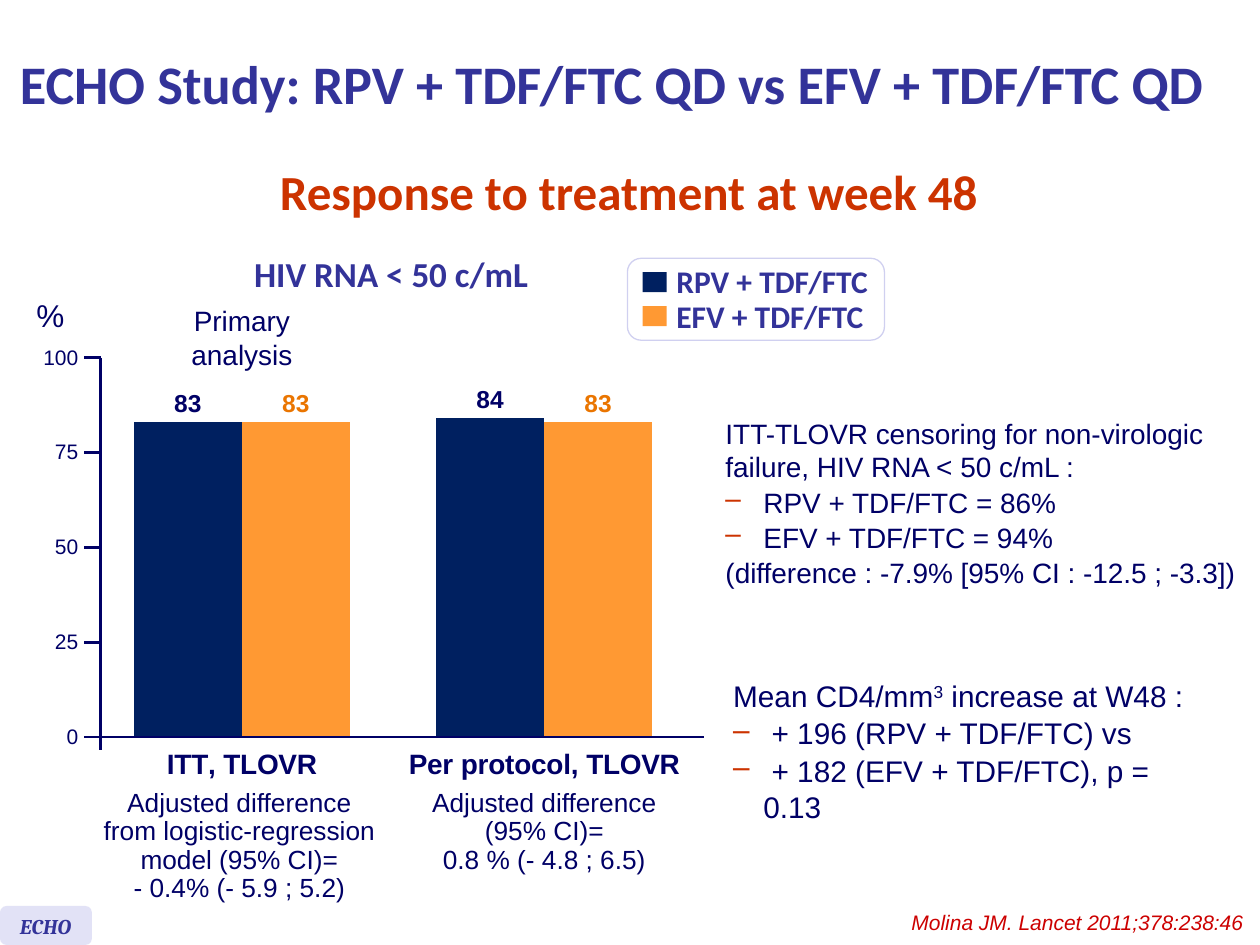
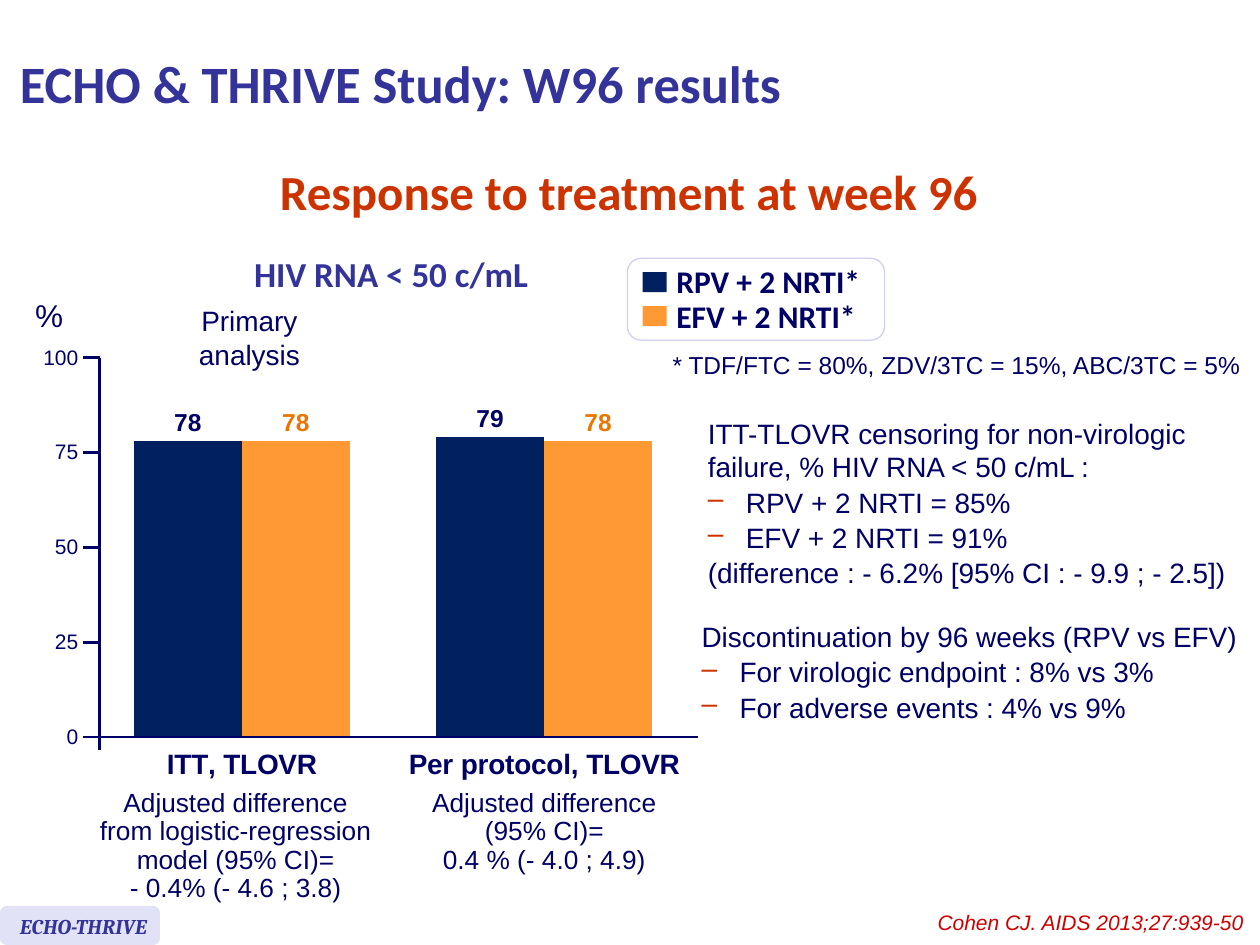
from dataclasses import dataclass

import lxml.etree
import pptx
import pptx.chart.data
import pptx.dml.color
import pptx.enum.chart
import pptx.enum.shapes
import pptx.enum.text
import pptx.oxml.ns
import pptx.util

Inches = pptx.util.Inches
Pt = pptx.util.Pt
qn = pptx.oxml.ns.qn
Align = pptx.enum.text.PP_ALIGN
Anchor = pptx.enum.text.MSO_ANCHOR
Shape = pptx.enum.shapes.MSO_SHAPE


@dataclass(frozen=True)
class Theme:
    heading: str = "Calibri"
    body: str = "Arial"
    tag: str = "Cambria"
    indigo: str = "333399"
    navy: str = "000066"
    red: str = "CC3300"
    citation: str = "CC0000"
    rpv: str = "002060"
    efv: str = "FF9933"
    efv_label: str = "EA7500"
    tag_fill: str = "E2E2F6"
    legend_line: str = "D0D0F0"
    white: str = "FFFFFF"
    subtitle_size: int = 28
    chart_title_size: int = 20
    legend_size: int = 18
    text_size: int = 16
    difference_size: int = 15
    value_size: int = 14
    small_size: int = 12


T = Theme()
CATEGORIES = ["ITT, TLOVR", "Per protocol, TLOVR"]
CHART_BOX = (0.1, 2.5, 5.7, 3.75)
PLOT_BOX = (0.72, 2.84, 4.8, 3.01)


def rgb(color):
    return pptx.dml.color.RGBColor.from_string(color)


def style_font(font, size, color=T.navy, name=T.body, bold=False, italic=False):
    font.size = Pt(size)
    font.name = name
    font.bold = bold
    font.italic = italic
    font.color.rgb = rgb(color)


def add_bullet(p, indent=0.24):
    pPr = p._p.get_or_add_pPr()
    pPr.set("marL", str(Inches(indent)))
    pPr.set("indent", str(-Inches(indent)))
    color = lxml.etree.SubElement(pPr, qn("a:buClr"))
    lxml.etree.SubElement(color, qn("a:srgbClr")).set("val", T.red)
    lxml.etree.SubElement(pPr, qn("a:buChar")).set("char", "–")


def add_text(s, box, paragraphs, size, align=Align.LEFT, anchor=Anchor.TOP,
             line_spacing=None, space_before=0, **font):
    """Add a text box; a leading "–" marks a bullet and "^" surrounds superscript."""
    tf = s.shapes.add_textbox(*map(Inches, box)).text_frame
    tf.word_wrap = True
    tf.vertical_anchor = anchor
    for i, text in enumerate(paragraphs):
        p = tf.add_paragraph() if i else tf.paragraphs[0]
        p.alignment = align
        if line_spacing:
            p.line_spacing = line_spacing
        if i and space_before:
            p.space_before = Pt(space_before)
        if text.startswith("–"):
            add_bullet(p)
            text = text[1:]
        for j, part in enumerate(text.split("^")):
            r = p.add_run()
            r.text = part
            style_font(r.font, size, **font)
            if j % 2:
                r._r.get_or_add_rPr().set("baseline", "30000")


def add_box(s, shape, box, fill, line=None):
    sp = s.shapes.add_shape(shape, *map(Inches, box))
    sp.shadow.inherit = False
    sp.fill.solid()
    sp.fill.fore_color.rgb = rgb(fill)
    if line:
        sp.line.color.rgb = rgb(line)
        sp.line.width = Pt(0.75)
    else:
        sp.line.fill.background()


def add_line(s, x1, y1, x2, y2):
    line = s.shapes.add_connector(pptx.enum.shapes.MSO_CONNECTOR.STRAIGHT,
                                  *map(Inches, (x1, y1, x2, y2)))
    line.line.color.rgb = rgb(T.navy)
    line.line.width = Pt(1.5)
    lxml.etree.SubElement(line._element.spPr, qn("a:effectLst"))


def add_frame(s, title, title_size, week, tag, tag_width, citation):
    """Add the title, subtitle, study tag and citation that every slide has."""
    add_text(s, (0.06, 0.05, 9.9, 1.21), [title], title_size, anchor=Anchor.MIDDLE,
             name=T.heading, color=T.indigo, bold=True)
    add_text(s, (1.49, 1.23, 7, 0.57), [f"Response to treatment at week {week}"],
             T.subtitle_size, Align.CENTER, name=T.heading, color=T.red, bold=True)
    add_box(s, Shape.ROUNDED_RECTANGLE, (0, 7.19, tag_width, 0.31), T.tag_fill)
    add_text(s, (0.06, 7.2, tag_width + 0.05, 0.3), [tag], T.small_size,
             name=T.tag, color=T.indigo, bold=True, italic=True)
    add_text(s, (6.97, 7.17, 3, 0.3), [citation], T.small_size, Align.RIGHT,
             color=T.citation, italic=True)


def add_legend(s, names, color):
    add_box(s, Shape.ROUNDED_RECTANGLE, (4.98, 2.05, 2.04, 0.65), T.white, T.legend_line)
    for i, (name, fill) in enumerate(zip(names, (T.rpv, T.efv))):
        add_box(s, Shape.RECTANGLE, (5.1, 2.16 + 0.27 * i, 0.19, 0.16), fill)
        add_text(s, (5.27, 2.03 + 0.28 * i, 1.8, 0.4), [name], T.legend_size,
                 name=T.heading, color=color, bold=True)


def set_plot_box(chart):
    """Fix the inner plot area so that the bars stand at PLOT_BOX on the slide."""
    plot_area = chart._chartSpace.chart.plotArea
    for old in plot_area.findall(qn("c:layout")):
        plot_area.remove(old)
    layout = lxml.etree.Element(qn("c:layout"))
    plot_area.insert(0, layout)
    manual = lxml.etree.SubElement(layout, qn("c:manualLayout"))
    left, top, width, height = CHART_BOX
    x, y, w, h = PLOT_BOX
    settings = [("layoutTarget", "inner"), ("xMode", "edge"), ("yMode", "edge"),
                ("x", (x - left) / width), ("y", (y - top) / height),
                ("w", w / width), ("h", h / height)]
    for key, value in settings:
        lxml.etree.SubElement(manual, qn(f"c:{key}")).set("val", str(value))


def style_axis(axis, size, bold=False):
    """Show only the labels; the invisible tick marks keep them off the plot."""
    style_font(axis.tick_labels.font, size, bold=bold)
    axis.format.line.fill.background()
    axis.major_tick_mark = pptx.enum.chart.XL_TICK_MARK.OUTSIDE
    axis.minor_tick_mark = pptx.enum.chart.XL_TICK_MARK.NONE
    axis.has_major_gridlines = False


def add_response_chart(s, names, rpv, efv):
    data = pptx.chart.data.CategoryChartData(number_format="0")
    data.categories = CATEGORIES
    for name, values in zip(names, (rpv, efv)):
        data.add_series(name, values)
    chart = s.shapes.add_chart(pptx.enum.chart.XL_CHART_TYPE.COLUMN_CLUSTERED,
                               *map(Inches, CHART_BOX), data).chart
    chart.has_title = False
    chart.has_legend = False
    style_font(chart.font, T.small_size)
    set_plot_box(chart)

    style_axis(chart.category_axis, T.text_size, bold=True)
    style_axis(chart.value_axis, T.small_size)
    chart.value_axis.minimum_scale = 0
    chart.value_axis.maximum_scale = 100
    chart.value_axis.major_unit = 25

    plot = chart.plots[0]
    plot.vary_by_categories = False
    plot.gap_width = 80
    plot.overlap = 0
    colors = ((T.rpv, T.navy), (T.efv, T.efv_label))
    for series, (fill, label) in zip(plot.series, colors):
        series.format.fill.solid()
        series.format.fill.fore_color.rgb = rgb(fill)
        labels = series.data_labels
        labels.show_value = True
        labels.position = pptx.enum.chart.XL_LABEL_POSITION.OUTSIDE_END
        style_font(labels.font, T.value_size, label, bold=True)


def add_axis_lines(s, x, right):
    top, height = PLOT_BOX[1], PLOT_BOX[3]
    bottom = top + height
    for i in range(4):
        y = top + height * i / 4
        add_line(s, x - 0.13, y, x, y)
    add_line(s, x, top, x, bottom + 0.1)
    add_line(s, x - 0.13, bottom, right, bottom)


def add_response_panel(s, names, legend_color, rpv, efv, itt_difference, pp_difference,
                       axis_x, axis_right, primary_x, itt_x):
    """Add the chart with its headings, legend and adjusted differences."""
    add_response_chart(s, names, rpv, efv)
    add_axis_lines(s, axis_x, axis_right)
    add_text(s, (1.71, 2.01, 2.79, 0.38), ["HIV RNA < 50 c/mL"], T.chart_title_size,
             Align.CENTER, Anchor.MIDDLE, line_spacing=0.8,
             name=T.heading, color=T.indigo, bold=True)
    add_text(s, (axis_x - 0.61, 2.3, 0.55, 0.4), ["%"], T.legend_size)
    add_text(s, (primary_x, 2.36, 1.5, 0.64), ["Primary", "analysis"],
             T.text_size, Align.CENTER)
    add_legend(s, names, legend_color)
    differences = [
        ((itt_x, 6.22, 2.54, 1.01), ["Adjusted difference", "from logistic-regression",
                                     "model (95% CI)=", itt_difference]),
        ((3.22, 6.22, 2.2, 0.78), ["Adjusted difference", "(95% CI)=", pp_difference]),
    ]
    for box, lines in differences:
        add_text(s, box, lines, T.difference_size, Align.CENTER, line_spacing=0.9)


def add_findings(s, box, paragraphs, size=T.text_size):
    add_text(s, box, paragraphs, size, anchor=Anchor.MIDDLE, space_before=1)


def add_week_48(s):
    add_frame(s, "ECHO Study: RPV + TDF/FTC QD vs EFV + TDF/FTC QD", 31, 48,
              "ECHO", 0.73, "Molina JM. Lancet 2011;378:238:46")
    add_response_panel(s, ["RPV + TDF/FTC", "EFV + TDF/FTC"], T.indigo,
                       (83, 84), (83, 83), "- 0.4% (- 5.9 ; 5.2)", "0.8 % (- 4.8 ; 6.5)",
                       axis_x=0.8, axis_right=5.59, primary_x=1.17, itt_x=0.63)
    add_findings(s, (5.66, 3.24, 4.34, 1.5), [
        "ITT-TLOVR censoring for non-virologic failure, HIV RNA < 50 c/mL :",
        "– RPV + TDF/FTC = 86%",
        "– EFV + TDF/FTC = 94%",
        "(difference : -7.9% [95% CI : -12.5 ; -3.3])"])
    add_findings(s, (5.72, 5.36, 3.9, 1.2), [
        "Mean CD4/mm^3^ increase at W48 :",
        "– + 196 (RPV + TDF/FTC) vs",
        "– + 182 (EFV + TDF/FTC), p = 0.13"], size=17)


def add_week_96(s):
    add_frame(s, "ECHO & THRIVE Study: W96 results", 30, 96,
              "ECHO-THRIVE", 1.27, "Cohen CJ. AIDS 2013;27:939-50")
    add_response_panel(s, ["RPV + 2 NRTI*", "EFV + 2 NRTI*"], T.navy,
                       (78, 79), (78, 78), "- 0.4% (- 4.6 ; 3.8)", "0.4 % (- 4.0 ; 4.9)",
                       axis_x=0.79, axis_right=5.54, primary_x=1.23, itt_x=0.6)
    add_text(s, (5.24, 2.73, 4.76, 0.34),
             ["* TDF/FTC = 80%, ZDV/3TC = 15%, ABC/3TC = 5%"], T.value_size)
    add_findings(s, (5.52, 3.24, 4.39, 1.5), [
        "ITT-TLOVR censoring for non-virologic failure, % HIV RNA < 50 c/mL :",
        "– RPV + 2 NRTI = 85%",
        "– EFV + 2 NRTI = 91%",
        "(difference : - 6.2% [95% CI : - 9.9 ; - 2.5])"])
    add_findings(s, (5.47, 4.86, 4.53, 0.94), [
        "Discontinuation by 96 weeks (RPV vs EFV)",
        "– For virologic endpoint : 8% vs 3%",
        "– For adverse events : 4% vs 9%"])


def main():
    prs = pptx.Presentation()
    prs.slide_width = Inches(10)
    prs.slide_height = Inches(7.5)
    for build in (add_week_48, add_week_96):
        build(prs.slides.add_slide(prs.slide_layouts[6]))
    prs.save("out.pptx")


if __name__ == "__main__":
    main()
